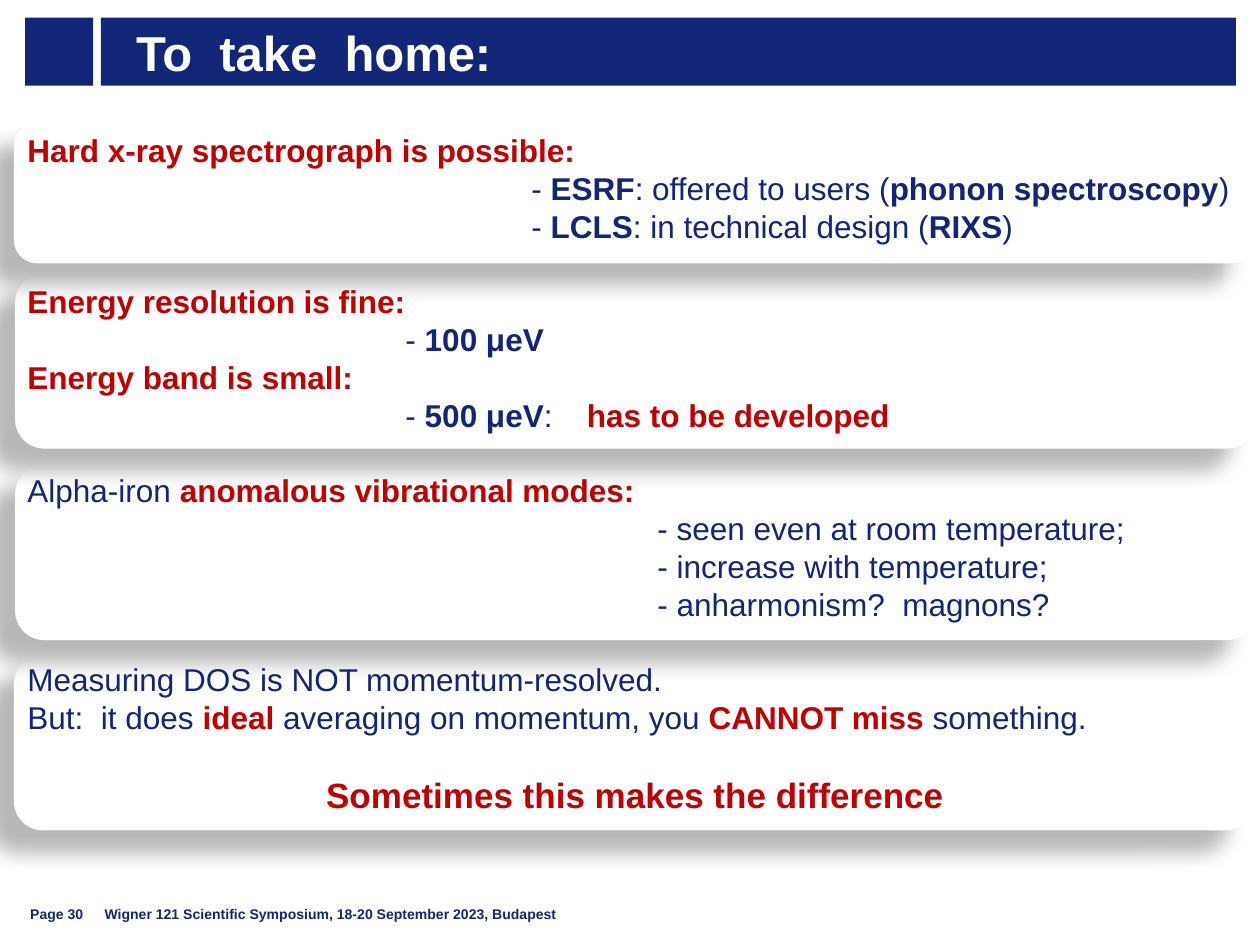
from lxml import etree
from pptx import Presentation
from pptx.dml.color import RGBColor
from pptx.enum.shapes import MSO_SHAPE
from pptx.enum.text import MSO_ANCHOR, PP_ALIGN
from pptx.oxml.ns import qn
from pptx.util import Inches, Pt

RECT, ROUND = MSO_SHAPE.RECTANGLE, MSO_SHAPE.ROUNDED_RECTANGLE
TOP, MID, LOW = MSO_ANCHOR.TOP, MSO_ANCHOR.MIDDLE, MSO_ANCHOR.BOTTOM
LEFT, MIDDLE = PP_ALIGN.LEFT, PP_ALIGN.CENTER
NAVY, RED, WHITE = "132577", "C00000", "FFFFFF"
WIDE, HIGH = Inches(10), Inches(7.5)
COL, ROW = WIDE // 100, HIGH // 75
LINE = 1.2

PLAIN, BOLD, HOT = (NAVY, False), (NAVY, True), (RED, True)

CARDS = [
    ((1.1, 9.7, 98.5, 11.2), 9.9, [40], [
        [("Hard x-ray spectrograph is possible:", HOT)],
        [("\t- ", PLAIN), ("ESRF", BOLD), (": offered to users (", PLAIN),
         ("phonon spectroscopy", BOLD), (")", PLAIN)],
        [("\t- ", PLAIN), ("LCLS", BOLD), (": in technical design (", PLAIN),
         ("RIXS", BOLD), (")", PLAIN)],
    ]),
    ((1.2, 21.7, 98.5, 13.9), 21.9, [30, 44.4], [
        [("Energy resolution is fine:", HOT)],
        [("\t- ", PLAIN), ("100 μeV", BOLD)],
        [("Energy band is small:", HOT)],
        [("\t- ", PLAIN), ("500 μeV", BOLD), (":\t", PLAIN),
         ("has to be developed", HOT)],
    ]),
    ((1.2, 36.9, 98.5, 13.9), 36.9, [50], [
        [("Alpha-iron ", PLAIN), ("anomalous vibrational modes:", HOT)],
        [("\t- seen even at room temperature;", PLAIN)],
        [("\t- increase with temperature;", PLAIN)],
        [("\t- anharmonism?  magnons?", PLAIN)],
    ]),
    ((1.1, 52, 98.5, 13.9), 51.9, [], [
        [("Measuring DOS is NOT momentum-resolved.", PLAIN)],
        [("But:  it does ", PLAIN), ("ideal", HOT),
         (" averaging on momentum, you ", PLAIN), ("CANNOT miss ", HOT),
         ("something.", PLAIN)],
    ]),
]
MORAL = [("Sometimes this makes the difference", HOT)]


def paint(code):
    """Turn a hex string into a colour."""
    return RGBColor.from_string(code)


def place(box):
    """Turn columns and rows into slide lengths."""
    x, y, w, h = box
    return [int(v) for v in (x * COL, y * ROW, w * COL, h * ROW)]


def block(slide, kind, box, fill):
    """Add a filled shape without line or shadow."""
    shape = slide.shapes.add_shape(kind, *place(box))
    shape.shadow.inherit = False
    shape.fill.solid()
    shape.fill.fore_color.rgb = paint(fill)
    shape.line.fill.background()
    return shape


def setup(shape, anchor, pads):
    """Set wrapping, anchor and insets of a text frame."""
    frame = shape.text_frame
    frame.word_wrap = True
    frame.vertical_anchor = anchor
    frame.margin_left, frame.margin_top, frame.margin_right, frame.margin_bottom = [
        int(pad * COL) for pad in pads]
    return frame


def write(para, parts, size, align=LEFT, stops=()):
    """Write styled runs with tab stops into a paragraph."""
    para.alignment = align
    if stops:
        tabs = etree.SubElement(para._p.get_or_add_pPr(), qn("a:tabLst"))
        for stop in stops:
            etree.SubElement(tabs, qn("a:tab"), pos=str(int(stop * COL)), algn="l")
    for text, (code, bold) in parts:
        run = para.add_run()
        run.text = text
        font = run.font
        font.name, font.size, font.bold = "Arial", Pt(size), bold
        font.color.rgb = paint(code)


def shade(shape):
    """Cast a soft shadow to the lower left."""
    effects = shape._element.spPr.find(qn("a:effectLst"))
    outer = etree.SubElement(effects, qn("a:outerShdw"), blurRad=str(Pt(11.8)),
                             dist=str(Pt(19.7)), dir=str(141 * 60000),
                             algn="ctr", rotWithShape="0")
    black = etree.SubElement(outer, qn("a:srgbClr"), val="000000")
    etree.SubElement(black, qn("a:alpha"), val="28000")


def header(slide, box, title):
    """Draw the square and the title bar."""
    x, y, w, h = box
    block(slide, RECT, (x, y, h, h), NAVY)
    bar = block(slide, RECT, (x + h + 0.6, y, w - h - 0.6, h), NAVY)
    frame = setup(bar, MID, (2.8, 0, 0.8, 0))
    write(frame.paragraphs[0], [(title, (WHITE, True))], 28)


def note(slide, box, lines, stops):
    """Write the lines of one card."""
    frame = setup(slide.shapes.add_textbox(*place(box)), TOP, (1, 0.5, 1, 0.5))
    for i, parts in enumerate(lines):
        para = frame.paragraphs[0] if i == 0 else frame.add_paragraph()
        tabbed = parts[0][0].startswith("\t")
        last = parts is MORAL
        size = 20 if last else 18
        write(para, parts, size, MIDDLE if last else LEFT, stops if tabbed else ())
        para.line_spacing = Pt(size * LINE)
        if last:
            para.space_before = Pt(18 * LINE)


def body(slide):
    """Stack the cards from the bottom up, then write on them."""
    for box, *_ in reversed(CARDS):
        shade(block(slide, ROUND, box, WHITE))
    for box, top, stops, lines in CARDS:
        full = lines if stops else lines + [MORAL]
        note(slide, (1.2, top, 98.4, box[3]), full, stops)


def footer(slide, box):
    """Write the page number and the event."""
    x, y, w, h = box
    gap = 5.9
    for left, wide, text in (
            (x, gap - 1.2, "Page 30"),
            (x + gap, w - gap,
             "Wigner 121 Scientific Symposium, 18-20 September 2023, Budapest")):
        label = slide.shapes.add_textbox(*place((left, y, wide, h)))
        frame = setup(label, LOW, (0, 0, 0, 0))
        write(frame.paragraphs[0], [(text, BOLD)], 8)


def main():
    """Build and save the slide."""
    deck = Presentation()
    deck.slide_width, deck.slide_height = WIDE, HIGH
    slide = deck.slides.add_slide(deck.slide_layouts[6])
    header(slide, (2, 1.4, 96.1, 5.4), "To  take  home:")
    body(slide)
    footer(slide, (2.4, 70.9, 72.8, 2.3))
    deck.save("out.pptx")


if __name__ == "__main__":
    main()
